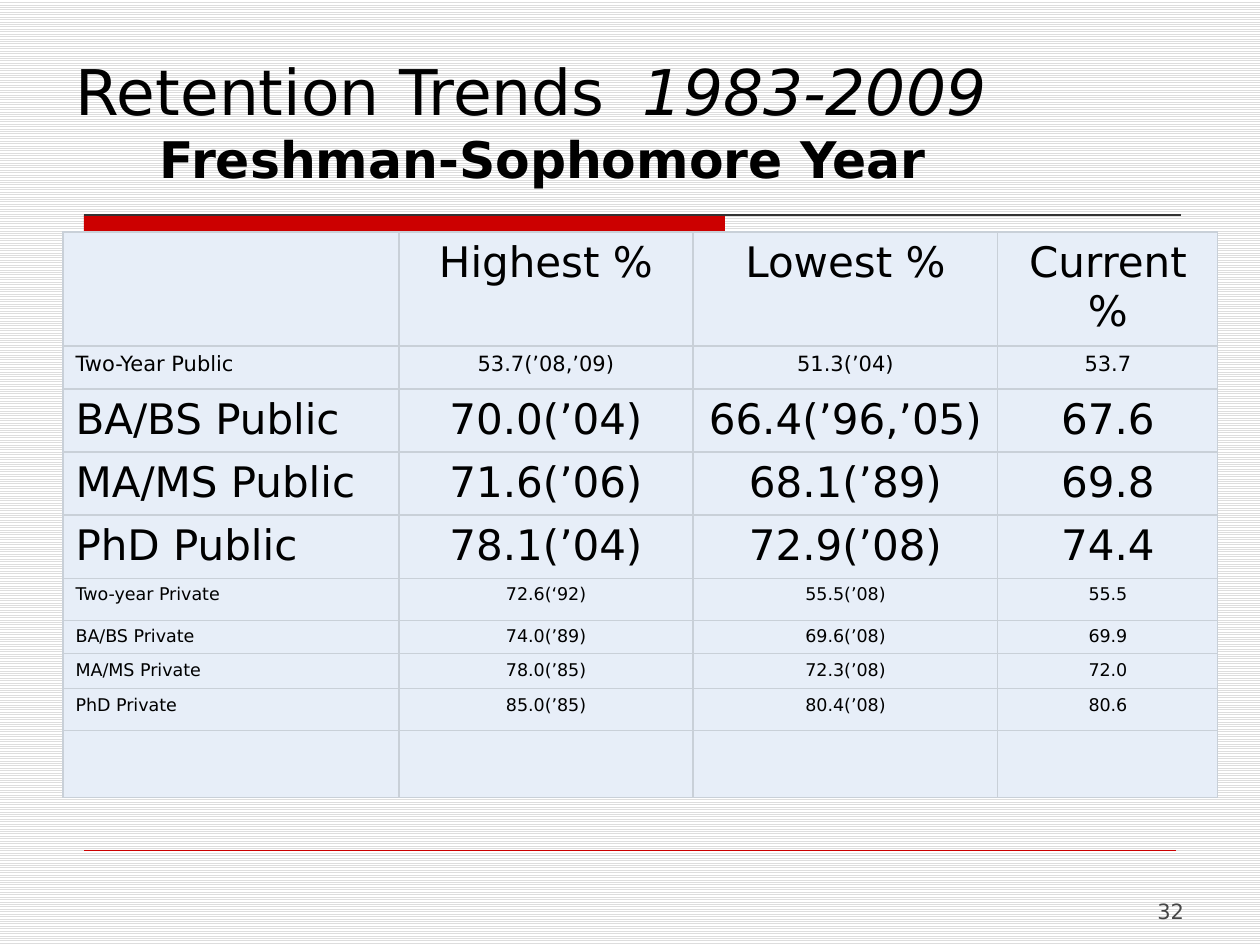
from lxml import etree
from pptx import Presentation, util as u
from pptx.dml.color import RGBColor
from pptx.enum import dml, shapes, text
from pptx.oxml.ns import qn

# Content
TITLE = ("Retention Trends\t", "1983-2009")
SUBTITLE = "Freshman-Sophomore Year"
PAGE = "32"
# (row height in px, type size name, cells)
ROWS = [
    (114, "large", ("", "Highest %", "Lowest %", "Current %")),
    (43, "medium", ("Two-Year Public", "53.7(’08,’09)", "51.3(’04)", "53.7")),
    (61, "large", ("BA/BS Public", "70.0(’04)", "66.4(’96,’05)", "67.6")),
    (62, "large", ("MA/MS Public", "71.6(’06)", "68.1(’89)", "69.8")),
    (61, "large", ("PhD Public", "78.1(’04)", "72.9(’08)", "74.4")),
    (42, "small", ("Two-year Private", "72.6(‘92)", "55.5(’08)", "55.5")),
    (33, "small", ("BA/BS Private", "74.0(’89)", "69.6(’08)", "69.9")),
    (35, "small", ("MA/MS Private", "78.0(’85)", "72.3(’08)", "72.0")),
    (42, "small", ("PhD Private", "85.0(’85)", "80.4(’08)", "80.6")),
    (67, "small", ("", "", "", "")),
]
COLUMNS = (336, 294, 305, 220)

THEME = {
    "font": "DejaVu Sans",
    "ink": "000000", "muted": "454545", "accent": "CC0000", "rule": "333333",
    "cell": "E7EEF8", "border": "C9D0D8", "stripe": "DDDDDD", "paper": "FFFFFF",
    "title": 36, "subtitle": 28.8, "large": 24, "medium": 12, "small": 10,
}


def px(n):
    return round(n * 914400 / 126)


def color(name):
    return RGBColor.from_string(THEME[name])


def style(run, size, ink="ink", bold=False, italic=False):
    font = run.font
    font.name, font.size = THEME["font"], u.Pt(THEME[size])
    font.bold, font.italic = bold, italic
    font.color.rgb = color(ink)


def add_text_box(slide, box, margins):
    frame = slide.shapes.add_textbox(*map(px, box)).text_frame
    frame.word_wrap = True
    frame.vertical_anchor = text.MSO_ANCHOR.BOTTOM
    (frame.margin_left, frame.margin_top,
     frame.margin_right, frame.margin_bottom) = map(px, margins)
    return frame


def add_rule(slide, left, right, y, ink, width):
    rule = slide.shapes.add_connector(
        shapes.MSO_CONNECTOR.STRAIGHT, px(left), px(y), px(right), px(y))
    rule.line.color.rgb = color(ink)
    rule.line.width = u.Pt(width)
    etree.SubElement(rule._element.spPr, qn("a:effectLst"))


def add_borders(cell):
    properties = cell._tc.get_or_add_tcPr()
    for position, side in enumerate(("lnL", "lnR", "lnT", "lnB")):
        line = etree.Element(qn("a:" + side), w=str(u.Pt(0.75)))
        fill = etree.SubElement(line, qn("a:solidFill"))
        etree.SubElement(fill, qn("a:srgbClr"), val=THEME["border"])
        properties.insert(position, line)


def add_retention_table(slide):
    heights = [row[0] for row in ROWS]
    table = slide.shapes.add_table(
        len(ROWS), len(COLUMNS), px(63), px(232),
        px(sum(COLUMNS)), px(sum(heights))).table
    table.first_row = table.horz_banding = False
    for column, width in zip(table.columns, COLUMNS):
        column.width = px(width)
    for r, (height, size, values) in enumerate(ROWS):
        table.rows[r].height = px(height)
        for c, value in enumerate(values):
            cell = table.cell(r, c)
            cell.fill.solid()
            cell.fill.fore_color.rgb = color("cell")
            add_borders(cell)
            if not value:
                continue
            paragraph = cell.text_frame.paragraphs[0]
            paragraph.text = value
            paragraph.space_before = u.Pt(round(THEME[size] * 0.2, 1))
            paragraph.alignment = text.PP_ALIGN.CENTER if c else text.PP_ALIGN.LEFT
            style(paragraph.runs[0], size)


def main():
    deck = Presentation()
    deck.slide_width, deck.slide_height = px(1260), px(945)
    slide = deck.slides.add_slide(deck.slide_layouts[6])

    # Striped background
    backdrop = slide.background.fill
    backdrop.patterned()
    backdrop.pattern = dml.MSO_PATTERN.LIGHT_HORIZONTAL
    backdrop.fore_color.rgb = color("stripe")
    backdrop.back_color.rgb = color("paper")

    # Title bar and rules
    bar = slide.shapes.add_shape(
        shapes.MSO_SHAPE.RECTANGLE, px(84), px(215), px(641), px(16))
    bar.shadow.inherit = False
    bar.fill.solid()
    bar.fill.fore_color.rgb = color("accent")
    bar.line.fill.background()
    add_rule(slide, 84, 1181, 215, "rule", 0.75)
    add_rule(slide, 84, 1176, 850, "accent", 0.25)

    # Page number
    page = add_text_box(slide, (903, 861, 294, 63), (13, 6, 13, 0)).paragraphs[0]
    page.text = PAGE
    page.alignment = text.PP_ALIGN.RIGHT
    style(page.runs[0], "medium", "muted")

    # Title and indented subtitle
    frame = add_text_box(slide, (63, 38, 1134, 157), (13, 6, 6, 6))
    title, subtitle = frame.paragraphs[0], frame.add_paragraph()
    for part, italic in zip(TITLE, (False, True)):
        run = title.add_run()
        run.text = part
        style(run, "title", italic=italic)
    subtitle.text = SUBTITLE
    subtitle._p.get_or_add_pPr().set("marL", str(px(84)))
    style(subtitle.runs[0], "subtitle", bold=True)

    add_retention_table(slide)
    deck.save("out.pptx")


if __name__ == "__main__":
    main()
